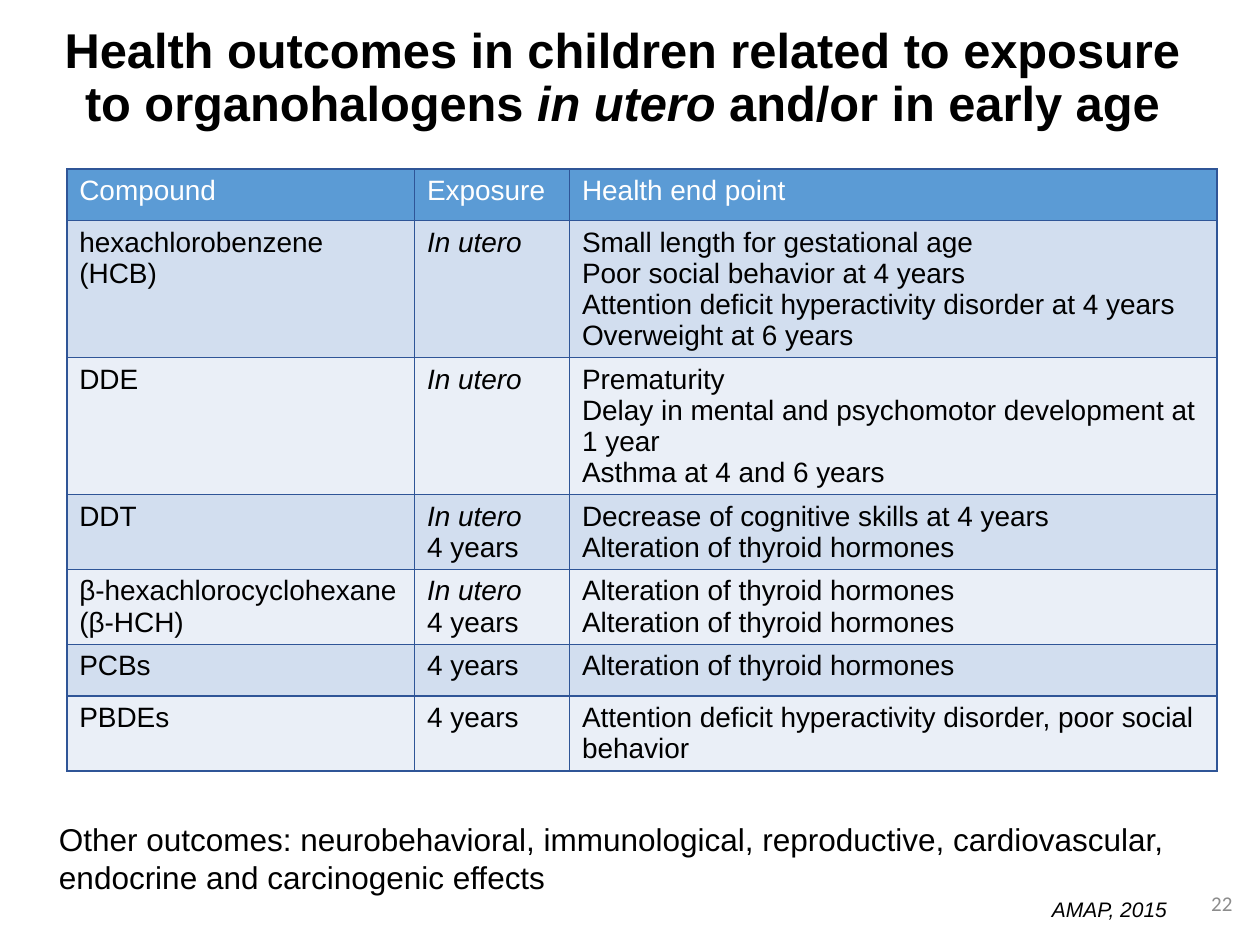
"""Build a slide with a table of health outcomes linked to organohalogen exposure."""
import dataclasses
import typing

import lxml.etree
import pptx
import pptx.dml.color
import pptx.enum.text
import pptx.oxml.ns
import pptx.util

EMU_PER_PX = 9144
ALIGN = pptx.enum.text.PP_ALIGN
ANCHOR = pptx.enum.text.MSO_ANCHOR


@dataclasses.dataclass(frozen=True)
class Theme:
    """Colours, fonts and type sizes of the slide."""
    ink: str = "000000"
    header_ink: str = "FFFFFF"
    number_ink: str = "8C8C8C"
    header_fill: str = "5B9BD5"
    bands: tuple = ("D2DEEF", "EAEFF7")
    border: str = "2F5597"
    body_font: str = "Arial"
    number_font: str = "Calibri"
    title_size: float = 27.9
    table_size: float = 16
    note_size: float = 18
    small_size: float = 12


THEME = Theme()


class Span(typing.NamedTuple):
    """A run of text with its format."""
    text: str
    size: float
    color: str = THEME.ink
    font: str = THEME.body_font
    bold: bool = False
    italic: bool = False


class Note(typing.NamedTuple):
    """A text box placed in px."""
    place: tuple[int, int, int, int]
    span: Span
    wrap: bool = True
    align: ALIGN = ALIGN.LEFT
    anchor: ANCHOR = ANCHOR.TOP


class Outcome(typing.NamedTuple):
    """A table row; each column holds its paragraphs."""
    compound: tuple[str, ...]
    exposure: tuple[str, ...]
    end_points: tuple[str, ...]


IN_UTERO = "In utero"
AT_FOUR = "4 years"
THYROID = "Alteration of thyroid hormones"
HEADER = Outcome(("Compound",), ("Exposure",), ("Health end point",))
OUTCOMES = (
    Outcome(("hexachlorobenzene (HCB)",), (IN_UTERO,), (
        "Small length for gestational age",
        "Poor social behavior at 4 years",
        "Attention deficit hyperactivity disorder at 4 years",
        "Overweight at 6 years")),
    Outcome(("DDE",), (IN_UTERO,), (
        "Prematurity",
        "Delay in mental and psychomotor development at 1 year",
        "Asthma at 4 and 6 years")),
    Outcome(("DDT",), (IN_UTERO, AT_FOUR), ("Decrease of cognitive skills at 4 years", THYROID)),
    Outcome(("β-hexachlorocyclohexane (β-HCH)",), (IN_UTERO, AT_FOUR), (THYROID, THYROID)),
    Outcome(("PCBs",), (AT_FOUR,), (THYROID,)),
    Outcome(("PBDEs",), (AT_FOUR,), (
        "Attention deficit hyperactivity disorder, poor social behavior",)),
)
TITLE = (
    Span("Health outcomes in children related to exposure to organohalogens ",
         THEME.title_size, bold=True),
    Span("in utero ", THEME.title_size, bold=True, italic=True),
    Span("and/or in early age", THEME.title_size, bold=True),
)
NOTES = (
    Note((37, 646, 914, 71), Span(
        "Other outcomes: neurobehavioral, immunological, reproductive, cardiovascular, "
        "endocrine and carcinogenic effects", THEME.note_size)),
    Note((825, 707, 114, 30), Span("AMAP, 2015", THEME.small_size, italic=True), wrap=False),
    Note((763, 697, 225, 40),
         Span("22", THEME.small_size, THEME.number_ink, THEME.number_font),
         align=ALIGN.RIGHT, anchor=ANCHOR.MIDDLE),
)
TITLE_PLACE = (21, 24, 946, 78)
TABLE_ORIGIN = (53, 134)
COLUMN_WIDTHS = (276, 123, 514)
ROW_HEIGHT = 41


def px(length: int) -> pptx.util.Emu:
    """Turn px into EMU."""
    return pptx.util.Emu(length * EMU_PER_PX)


def rgb(color: str) -> pptx.dml.color.RGBColor:
    """Turn a hex string into a colour."""
    return pptx.dml.color.RGBColor.from_string(color)


def apply(target: typing.Any, values: dict[str, typing.Any]) -> None:
    """Set attributes from a dict."""
    for name, value in values.items():
        setattr(target, name, value)


def write_span(para: typing.Any, span: Span) -> None:
    """Append a formatted run to a paragraph."""
    run = para.add_run()
    run.text = span.text
    apply(run.font, {"name": span.font, "size": pptx.util.Pt(span.size),
                     "bold": span.bold, "italic": span.italic})
    run.font.color.rgb = rgb(span.color)


def draw_title(page: typing.Any) -> None:
    """Place and fill the title placeholder."""
    title = page.shapes.title
    apply(title, dict(zip(("left", "top", "width", "height"), map(px, TITLE_PLACE))))
    apply(title.text_frame, {"word_wrap": True, "vertical_anchor": ANCHOR.MIDDLE,
                             "auto_size": pptx.enum.text.MSO_AUTO_SIZE.NONE})
    para = title.text_frame.paragraphs[0]
    apply(para, {"alignment": ALIGN.CENTER, "line_spacing": 0.9})
    for span in TITLE:
        write_span(para, span)


def draw_note(page: typing.Any, note: Note) -> None:
    """Add a text box with one paragraph."""
    frame = page.shapes.add_textbox(*map(px, note.place)).text_frame
    apply(frame, {"word_wrap": note.wrap, "vertical_anchor": note.anchor})
    frame.paragraphs[0].alignment = note.align
    write_span(frame.paragraphs[0], note.span)


def draw_borders(cell: typing.Any) -> None:
    """Outline a table cell on all four sides."""
    qn = pptx.oxml.ns.qn
    properties = cell._tc.get_or_add_tcPr()
    for side in ("a:lnL", "a:lnR", "a:lnT", "a:lnB"):
        line = lxml.etree.SubElement(properties, qn(side), w=str(pptx.util.Pt(1)))
        fill = lxml.etree.SubElement(line, qn("a:solidFill"))
        lxml.etree.SubElement(fill, qn("a:srgbClr"), val=THEME.border)


def draw_cell(cell: typing.Any, lines: tuple[str, ...], fill: str, ink: str) -> None:
    """Fill a table cell with one paragraph per line."""
    draw_borders(cell)
    cell.fill.solid()
    cell.fill.fore_color.rgb = rgb(fill)
    frame = cell.text_frame
    for index, line in enumerate(lines):
        para = frame.add_paragraph() if index else frame.paragraphs[0]
        write_span(para, Span(line, THEME.table_size, ink, italic=line == IN_UTERO))


def draw_table(page: typing.Any) -> None:
    """Add the outcome table with a header and alternating bands."""
    rows = (HEADER, *OUTCOMES)
    size = (sum(COLUMN_WIDTHS), ROW_HEIGHT * len(rows))
    table = page.shapes.add_table(
        len(rows), len(COLUMN_WIDTHS), *map(px, TABLE_ORIGIN + size)).table
    for column, width in zip(table.columns, COLUMN_WIDTHS):
        column.width = px(width)
    for index, outcome in enumerate(rows):
        table.rows[index].height = px(ROW_HEIGHT)
        fill = THEME.bands[(index - 1) % 2] if index else THEME.header_fill
        ink = THEME.ink if index else THEME.header_ink
        for cell, lines in zip(table.rows[index].cells, outcome):
            draw_cell(cell, lines, fill, ink)


def main() -> None:
    """Build and save the deck."""
    deck = pptx.Presentation()
    apply(deck, {"slide_width": px(1000), "slide_height": px(750)})
    page = deck.slides.add_slide(deck.slide_layouts.get_by_name("Title Only"))
    draw_title(page)
    draw_table(page)
    for note in NOTES:
        draw_note(page, note)
    deck.save("out.pptx")


if __name__ == "__main__":
    main()
